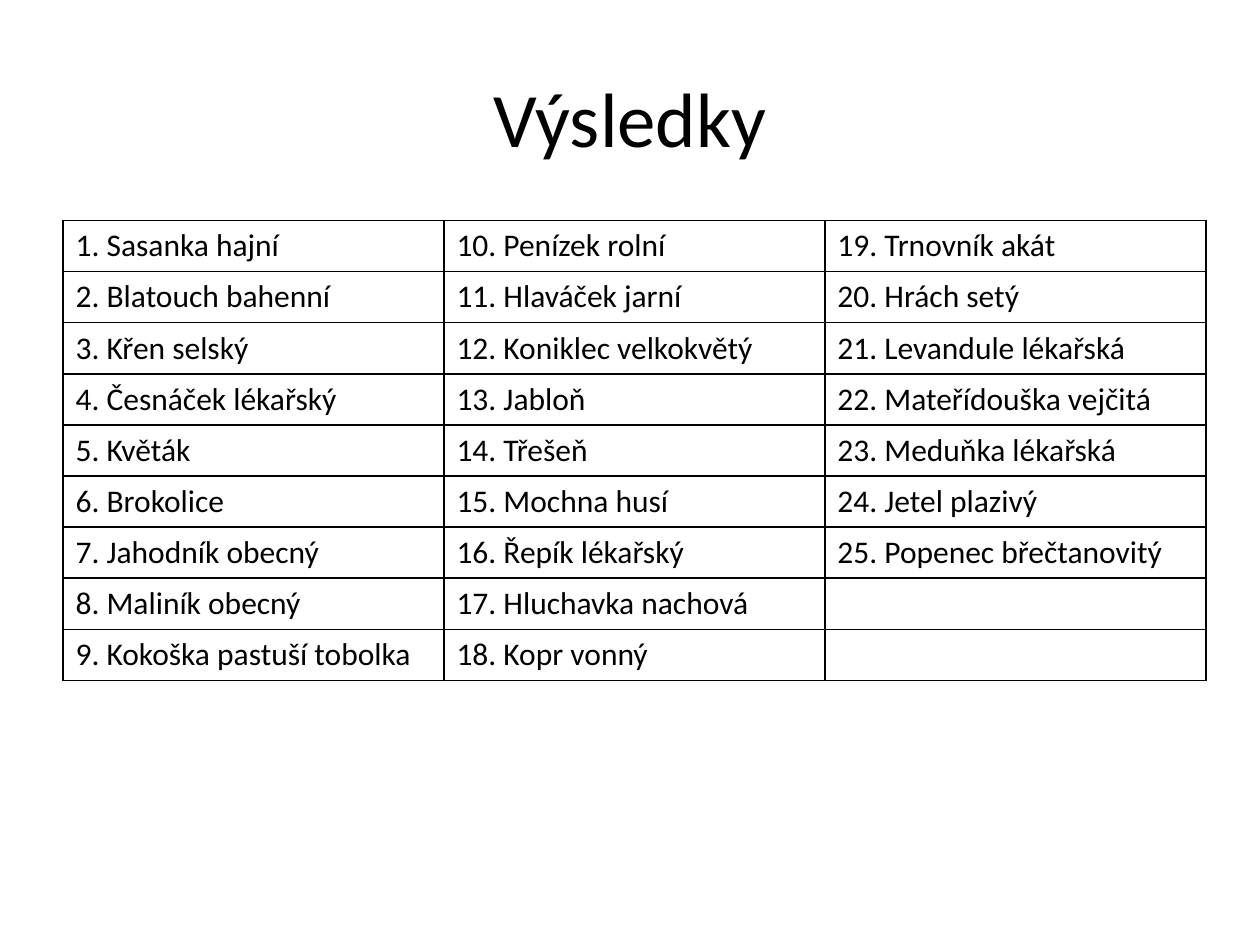
import dataclasses

import lxml.etree
import pptx
import pptx.dml.color
import pptx.enum.text
import pptx.oxml.ns
import pptx.util

Inches = pptx.util.Inches
BLACK = pptx.dml.color.RGBColor(0x00, 0x00, 0x00)
FONT = "Calibri"
ROWS = 9
COLS = 3
PLANTS = [
    "Sasanka hajní", "Blatouch bahenní", "Křen selský",
    "Česnáček lékařský", "Květák", "Brokolice",
    "Jahodník obecný", "Maliník obecný", "Kokoška pastuší tobolka",
    "Penízek rolní", "Hlaváček jarní", "Koniklec velkokvětý",
    "Jabloň", "Třešeň", "Mochna husí",
    "Řepík lékařský", "Hluchavka nachová", "Kopr vonný",
    "Trnovník akát", "Hrách setý", "Levandule lékařská",
    "Mateřídouška vejčitá", "Meduňka lékařská", "Jetel plazivý",
    "Popenec břečtanovitý",
]


@dataclasses.dataclass
class Entry:
    number: int
    plant: str

    @property
    def label(self) -> str:
        return f"{self.number}. {self.plant}"


def style(frame, size: int) -> None:
    for para in frame.paragraphs:
        for run in para.runs:
            run.font.name = FONT
            run.font.size = pptx.util.Pt(size)
            run.font.color.rgb = BLACK


def border(cell) -> None:
    qn = pptx.oxml.ns.qn
    props = cell._tc.get_or_add_tcPr()
    for side in ("lnL", "lnR", "lnT", "lnB"):
        line = lxml.etree.SubElement(props, qn(f"a:{side}"), w=str(pptx.util.Pt(1)))
        fill = lxml.etree.SubElement(line, qn("a:solidFill"))
        lxml.etree.SubElement(fill, qn("a:srgbClr"), val=str(BLACK))


def add_title(slide, text: str) -> None:
    title = slide.shapes.title
    title.left, title.top = Inches(0.5), Inches(0.3)
    title.width, title.height = Inches(9), Inches(1.25)
    frame = title.text_frame
    frame.text = text
    frame.vertical_anchor = pptx.enum.text.MSO_ANCHOR.MIDDLE
    frame.paragraphs[0].alignment = pptx.enum.text.PP_ALIGN.CENTER
    style(frame, 44)


def add_grid(slide, entries: list[Entry]) -> None:
    table = slide.shapes.add_table(
        ROWS, COLS, Inches(0.5), Inches(1.75), Inches(9.07), Inches(3.65)
    ).table
    table.first_row = False
    table.horz_banding = False
    for cell in table.iter_cells():
        border(cell)
        cell.fill.background()
    for index, entry in enumerate(entries):
        col, row = divmod(index, ROWS)
        frame = table.cell(row, col).text_frame
        frame.text = entry.label
        style(frame, 18)


def main() -> None:
    deck = pptx.Presentation()
    deck.slide_width, deck.slide_height = Inches(10), Inches(7.5)
    slide = deck.slides.add_slide(deck.slide_layouts[5])
    add_title(slide, "Výsledky")
    add_grid(slide, [Entry(num, name) for num, name in enumerate(PLANTS, 1)])
    deck.save("out.pptx")


if __name__ == "__main__":
    main()
